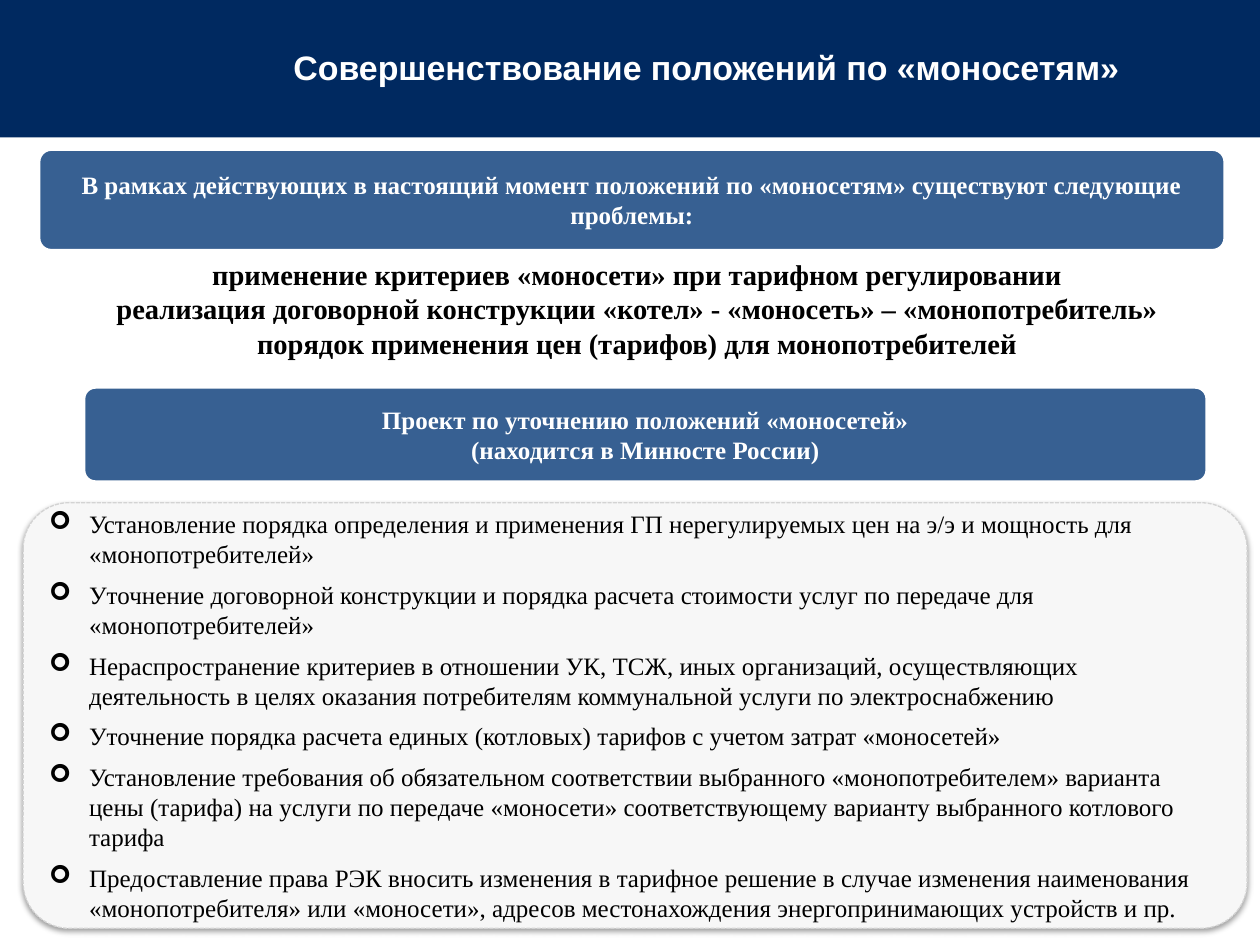
from dataclasses import dataclass
from typing import Any

import pptx
import pptx.dml.color
import pptx.enum.dml
import pptx.enum.shapes
import pptx.enum.text
import pptx.oxml
import pptx.util
from lxml import etree

WIDTH, HEIGHT = 9.8, 7.35
NAVY, BLUE, PALE, GREY = "002960", "376092", "F7F7F7", "D3D3D3"
WHITE, BLACK = "FFFFFF", "000000"
DRAWING = "http://schemas.openxmlformats.org/drawingml/2006/main"
BULLET = "➢"
INDENT = pptx.util.Inches(0.31)
SHAPES = pptx.enum.shapes.MSO_SHAPE
ALIGN = pptx.enum.text.PP_ALIGN

SERIF = {"name": "Times New Roman", "size": pptx.util.Pt(14), "bold": False}
SERIF_BOLD = SERIF | {"bold": True}
LEAD = SERIF_BOLD | {"size": pptx.util.Pt(16)}
HEADING = {"name": "Arial", "size": pptx.util.Pt(19), "bold": True}


@dataclass(frozen=True)
class Area:
    """A rectangle given as shares of the slide's width and height."""
    left: float
    top: float
    width: float
    height: float

    def lengths(self) -> list[int]:
        shares = (self.left, self.top, self.width, self.height)
        return [pptx.util.Inches(share * side)
                for share, side in zip(shares, (WIDTH, HEIGHT) * 2)]


@dataclass(frozen=True)
class Panel:
    area: Area
    fill: str
    line: str = ""
    line_width: float = 0
    rounding: float = 0
    lines: tuple[str, ...] = ()
    ink: str = WHITE


BAND = Panel(Area(0, 0, 1, 0.1456), NAVY)
BANNERS = (
    Panel(Area(0.0306, 0.1578, 0.9418, 0.1075), BLUE, WHITE, 2, 0.125,
          ("В рамках действующих в настоящий момент положений по «моносетям» "
           "существуют следующие проблемы:",)),
    Panel(Area(0.0663, 0.4095, 0.8918, 0.1007), BLUE, WHITE, 2, 0.125,
          ("Проект по уточнению положений «моносетей»",
           "(находится в Минюсте России)")),
)
MEASURES = Panel(
    Area(0.0184, 0.532, 0.9714, 0.4503), PALE, GREY, 0.75, 0.108,
    ("Установление порядка определения и применения ГП нерегулируемых цен "
     "на э/э и мощность для «монопотребителей»",
     "Уточнение договорной конструкции и порядка расчета стоимости услуг "
     "по передаче для «монопотребителей»",
     "Нераспространение критериев в отношении УК, ТСЖ, иных организаций, "
     "осуществляющих деятельность в целях оказания потребителям "
     "коммунальной услуги по электроснабжению",
     "Уточнение порядка расчета единых (котловых) тарифов с учетом затрат "
     "«моносетей»",
     "Установление требования об обязательном соответствии выбранного "
     "«монопотребителем» варианта цены (тарифа) на услуги по передаче "
     "«моносети» соответствующему варианту выбранного котлового тарифа",
     "Предоставление права РЭК вносить изменения в тарифное решение в случае "
     "изменения наименования «монопотребителя» или «моносети», адресов "
     "местонахождения энергопринимающих устройств и пр."),
    BLACK)
TITLE = "Совершенствование положений по «моносетям»"
TITLE_AREA = Area(0.1459, 0.049, 0.8296, 0.0435)
PROBLEMS = (
    "применение критериев «моносети» при тарифном регулировании",
    "реализация договорной конструкции «котел» - «моносеть» – "
    "«монопотребитель» порядок применения цен (тарифов) для монопотребителей",
)
PROBLEMS_AREA = Area(0.05, 0.2653, 0.9112, 0.1238)


def colour(value: str) -> pptx.dml.color.RGBColor:
    return pptx.dml.color.RGBColor.from_string(value)


def add_bullet(para: Any) -> None:
    properties = para._p.get_or_add_pPr()
    properties.set("marL", str(INDENT))
    properties.set("indent", str(-INDENT))
    etree.SubElement(properties, f"{{{DRAWING}}}buFont", typeface="Wingdings")
    etree.SubElement(properties, f"{{{DRAWING}}}buChar", char=BULLET)


def write(box: Any, lines: tuple[str, ...], font: dict[str, Any], ink: str,
          bulleted: bool = False, middle: bool = True) -> None:
    frame = box.text_frame
    frame.word_wrap = True
    anchor = pptx.enum.text.MSO_ANCHOR
    frame.vertical_anchor = anchor.MIDDLE if middle else anchor.TOP
    for index, line in enumerate(lines):
        para = frame.add_paragraph() if index else frame.paragraphs[0]
        para.alignment = ALIGN.LEFT if bulleted else ALIGN.CENTER
        if bulleted:
            if index:
                para.space_before = pptx.util.Pt(6)
            add_bullet(para)
        span = para.add_run()
        span.text = line
        for name, value in font.items():
            setattr(span.font, name, value)
        span.font.color.rgb = colour(ink)


def add_panel(page: Any, panel: Panel) -> Any:
    kind = SHAPES.ROUNDED_RECTANGLE if panel.rounding else SHAPES.RECTANGLE
    shape = page.shapes.add_shape(kind, *panel.area.lengths())
    shape.shadow.inherit = False
    shape.fill.solid()
    shape.fill.fore_color.rgb = colour(panel.fill)
    if panel.rounding:
        shape.adjustments[0] = panel.rounding
    if panel.line:
        shape.line.color.rgb = colour(panel.line)
        shape.line.width = pptx.util.Pt(panel.line_width)
    else:
        shape.line.fill.background()
    return shape


def add_soft_shadow(shape: Any) -> None:
    effects = shape._element.spPr.find(f"{{{DRAWING}}}effectLst")
    effects.append(pptx.oxml.parse_xml(
        f'<a:outerShdw xmlns:a="{DRAWING}" blurRad="{pptx.util.Pt(3.1)}" '
        f'dist="{pptx.util.Pt(1.6)}" dir="5400000" rotWithShape="0">'
        f'<a:srgbClr val="{BLACK}"><a:alpha val="38000"/></a:srgbClr>'
        '</a:outerShdw>'))


def main() -> None:
    deck = pptx.Presentation()
    deck.slide_width = pptx.util.Inches(WIDTH)
    deck.slide_height = pptx.util.Inches(HEIGHT)
    page = deck.slides.add_slide(deck.slide_layouts[6])

    add_panel(page, BAND)
    title = page.shapes.add_textbox(*TITLE_AREA.lengths())
    for side in ("left", "top", "right", "bottom"):
        setattr(title.text_frame, f"margin_{side}", 0)
    write(title, (TITLE,), HEADING, WHITE)

    for banner in BANNERS:
        write(add_panel(page, banner), banner.lines, SERIF_BOLD, banner.ink)

    measures = add_panel(page, MEASURES)
    measures.line.dash_style = pptx.enum.dml.MSO_LINE.SQUARE_DOT
    add_soft_shadow(measures)
    write(measures, MEASURES.lines, SERIF, MEASURES.ink, bulleted=True)

    problems = page.shapes.add_textbox(*PROBLEMS_AREA.lengths())
    write(problems, PROBLEMS, LEAD, BLACK, middle=False)

    deck.save("out.pptx")


if __name__ == "__main__":
    main()
